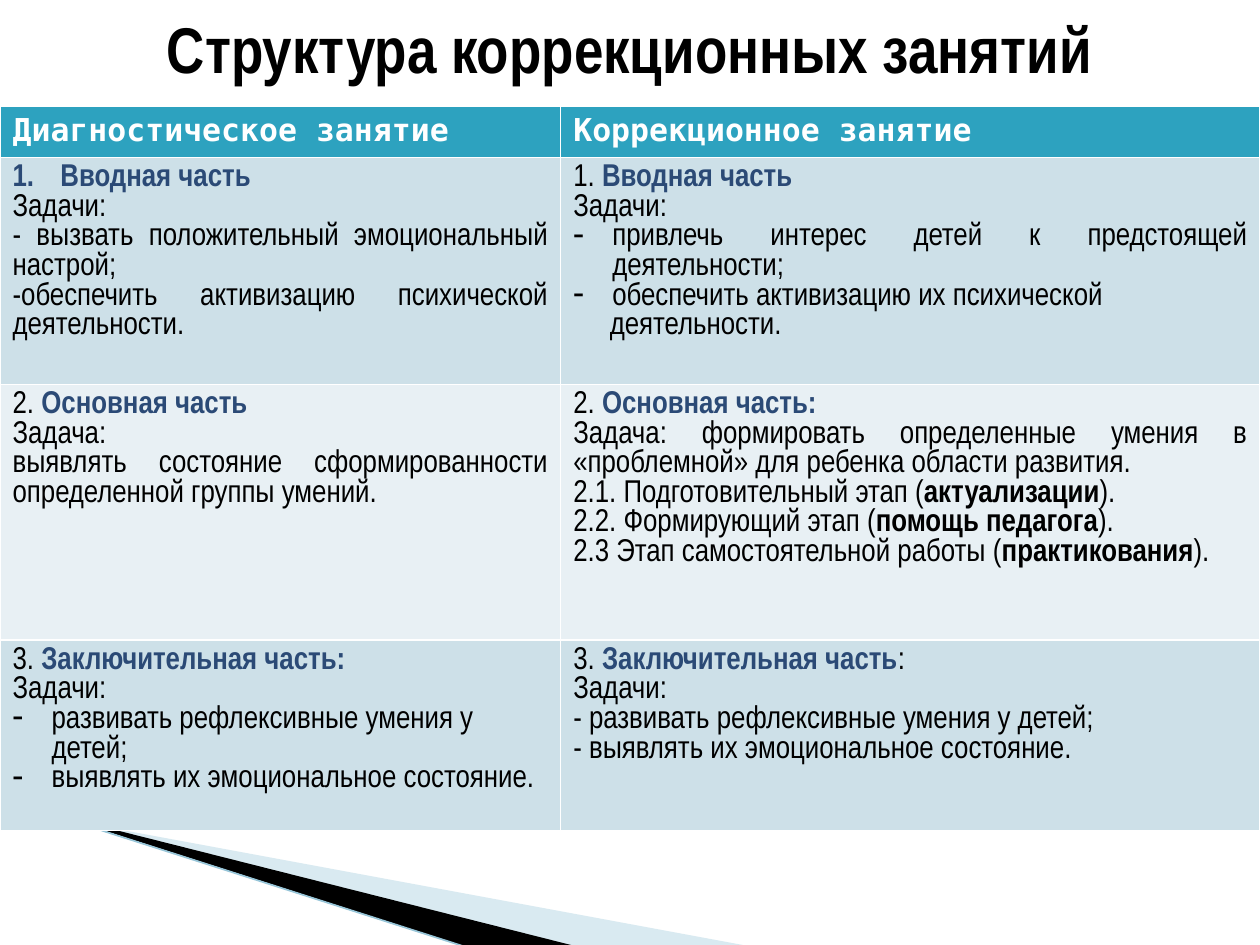
from lxml.etree import SubElement
from pptx import Presentation
from pptx.dml.color import RGBColor
from pptx.enum.text import MSO_ANCHOR, PP_ALIGN
from pptx.oxml.ns import qn
from pptx.util import Inches, Pt

NARROW, MONO = "Arial Narrow", "DejaVu Sans Mono"
BLACK, WHITE, NAVY = "000000", "FFFFFF", "2B4A76"
TEAL, BLUE, PALE = "2DA2BF", "CDE0E8", "E8F0F4"
TITLE = "Структура коррекционных занятий"
HEADERS = ["Диагностическое занятие", "Коррекционное занятие"]
COLUMN_WIDTHS = [4.45, 5.55]
ROW_HEIGHTS = [0.41, 1.8, 2.03, 1.51]
ROW_FILLS = [BLUE, PALE, BLUE]

# Paragraph: (style, run, run, ...); a run is (text, kind).
PLAIN, HEADING, STRONG = (BLACK, False), (NAVY, True), (BLACK, True)
STYLES = {
    "left": (PP_ALIGN.LEFT, 0, 0, None),
    "justified": (PP_ALIGN.JUSTIFY, 0, 0, None),
    "numbered": (PP_ALIGN.LEFT, 0.38, -0.38, ("a:buAutoNum", "type", "arabicPeriod")),
    "dash": (PP_ALIGN.LEFT, 0.31, -0.31, ("a:buChar", "char", "-")),
    "dash justified": (PP_ALIGN.JUSTIFY, 0.31, -0.31, ("a:buChar", "char", "-")),
    "continued": (PP_ALIGN.JUSTIFY, 0.29, 0, None),
}


def plain(style, text):
    """Return a paragraph of one plain run."""
    return (style, (text, PLAIN))


def heading(number, text, *rest):
    """Return a numbered part heading."""
    return ("left", (f"{number}. ", PLAIN), (text, HEADING), *rest)


def stage(text, name):
    """Return a stage line with its name in bold."""
    return ("justified", (f"{text} (", PLAIN), (name, STRONG), (").", PLAIN))


ROWS = [
    [
        [
            ("numbered", ("Вводная часть", HEADING)),
            plain("justified", "Задачи:"),
            plain("justified", "- вызвать положительный эмоциональный настрой;"),
            plain("justified", "-обеспечить активизацию психической деятельности."),
        ],
        [
            heading(1, "Вводная часть"),
            plain("left", "Задачи:"),
            plain("dash justified", "привлечь интерес детей к предстоящей деятельности;"),
            plain("dash justified", "обеспечить активизацию их психической"),
            plain("continued", "деятельности."),
        ],
    ],
    [
        [
            heading(2, "Основная часть"),
            plain("justified", "Задача:"),
            plain("justified", "выявлять состояние сформированности определенной группы умений."),
        ],
        [
            heading(2, "Основная часть:"),
            plain("justified", "Задача: формировать определенные умения в «проблемной» "
                  "для ребенка области развития."),
            stage("2.1. Подготовительный этап", "актуализации"),
            stage("2.2. Формирующий этап", "помощь педагога"),
            stage("2.3 Этап самостоятельной работы", "практикования"),
        ],
    ],
    [
        [
            heading(3, "Заключительная часть:"),
            plain("left", "Задачи:"),
            plain("dash", "развивать рефлексивные умения у детей;"),
            plain("dash", "выявлять их эмоциональное состояние."),
        ],
        [
            heading(3, "Заключительная часть", (":", PLAIN)),
            plain("left", "Задачи:"),
            plain("left", "- развивать рефлексивные умения у детей;"),
            plain("left", "- выявлять их эмоциональное состояние."),
        ],
    ],
]
WEDGES = [
    ([(0.55, 6.51), (5.95, 7.51), (4.56, 7.51), (0.55, 6.5)], "A0CBDC", 40),
    ([(0.53, 6.49), (4.57, 7.51), (3.72, 7.52), (0.54, 6.5)], BLACK, 100),
]
EDGE = [(-0.01, 6.33), (3.71, 7.52)]


def color(value):
    """Turn a hex string into a colour."""
    return RGBColor.from_string(value)


def set_font(font, name, size, value, bold):
    """Apply name, size, colour and weight to a font."""
    font.name, font.size, font.bold = name, Pt(size), bold
    font.color.rgb = color(value)


def add_wedge(slide, points, fill, opacity):
    """Draw one filled corner wedge."""
    start, *others = [(Inches(x), Inches(y)) for x, y in points]
    builder = slide.shapes.build_freeform(*start)
    builder.add_line_segments(others)
    shape = builder.convert_to_shape()
    shape.shadow.inherit = False
    shape.fill.solid()
    shape.fill.fore_color.rgb = color(fill)
    shape.line.fill.background()
    if opacity < 100:
        tint = shape.fill._xPr.find(".//" + qn("a:srgbClr"))
        SubElement(tint, qn("a:alpha"), val=str(opacity * 1000))


def add_edge(slide):
    """Draw the thin line along the wedges."""
    (x1, y1), (x2, y2) = EDGE
    edge = slide.shapes.add_connector(1, Inches(x1), Inches(y1), Inches(x2), Inches(y2))
    edge.line.color.rgb = color("97C5D8")
    edge.line.width = Pt(0.95)
    SubElement(edge._element.spPr, qn("a:effectLst"))


def fill_paragraph(paragraph, style, *runs):
    """Write styled runs into a paragraph."""
    alignment, margin, indent, bullet = STYLES[style]
    paragraph.alignment = alignment
    properties = paragraph._p.get_or_add_pPr()
    properties.set("marL", str(Inches(margin)))
    properties.set("indent", str(Inches(indent)))
    if bullet:
        tag, key, value = bullet
        SubElement(properties, qn(tag), {key: value})
    for text, (value, bold) in runs:
        run = paragraph.add_run()
        run.text = text
        set_font(run.font, NARROW, 18, value, bold)


def fill_cell(cell, fill, paragraphs):
    """Colour a cell and write its paragraphs."""
    cell.fill.solid()
    cell.fill.fore_color.rgb = color(fill)
    frame = cell.text_frame
    for index, (style, *runs) in enumerate(paragraphs):
        paragraph = frame.add_paragraph() if index else frame.paragraphs[0]
        fill_paragraph(paragraph, style, *runs)


def add_lesson_table(slide):
    """Build the table comparing the two lessons."""
    table = slide.shapes.add_table(
        len(ROW_HEIGHTS), len(COLUMN_WIDTHS), 0, Inches(0.84),
        Inches(sum(COLUMN_WIDTHS)), Inches(sum(ROW_HEIGHTS))).table
    for column, width in zip(table.columns, COLUMN_WIDTHS):
        column.width = Inches(width)
    for row, height in zip(table.rows, ROW_HEIGHTS):
        row.height = Inches(height)
    for cell, text in zip(table.rows[0].cells, HEADERS):
        fill_cell(cell, TEAL, [("left", (text, (WHITE, True)))])
        cell.text_frame.paragraphs[0].runs[0].font.name = MONO
    for index, (fill, contents) in enumerate(zip(ROW_FILLS, ROWS), 1):
        for cell, paragraphs in zip(table.rows[index].cells, contents):
            fill_cell(cell, fill, paragraphs)


def add_title(slide):
    """Place and format the slide title."""
    title = slide.shapes.title
    title.left, title.top, title.width, title.height = 0, 0, Inches(10), Inches(0.76)
    frame = title.text_frame
    frame.text = TITLE
    frame.vertical_anchor = MSO_ANCHOR.MIDDLE
    frame.paragraphs[0].alignment = PP_ALIGN.CENTER
    set_font(frame.paragraphs[0].font, NARROW, 36.9, BLACK, True)


def main():
    """Build and save the presentation."""
    presentation = Presentation()
    presentation.slide_width, presentation.slide_height = Inches(10), Inches(7.5)
    slide = presentation.slides.add_slide(presentation.slide_layouts[5])
    for wedge in WEDGES:
        add_wedge(slide, *wedge)
    add_edge(slide)
    add_lesson_table(slide)
    add_title(slide)
    presentation.save("out.pptx")


if __name__ == "__main__":
    main()
